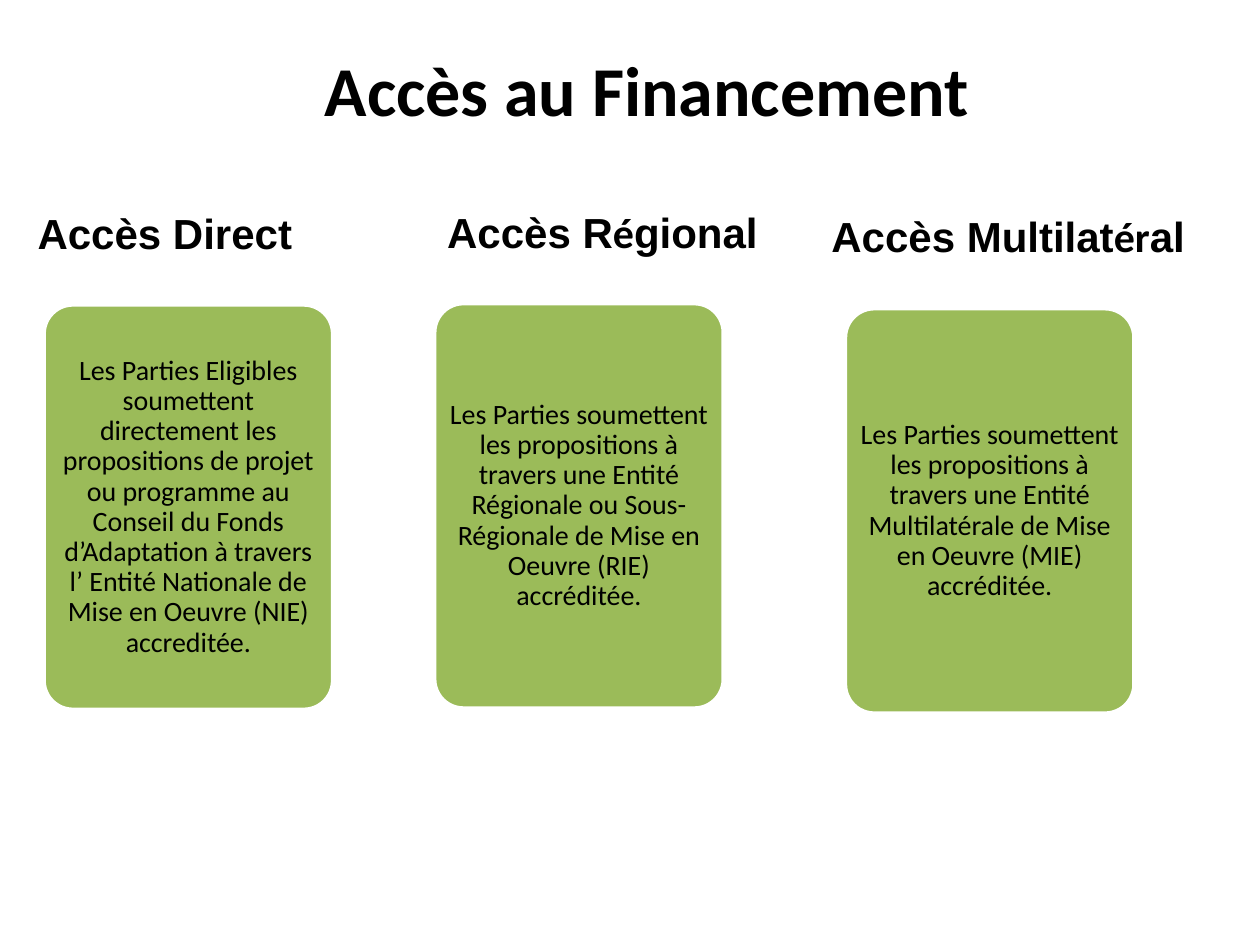
from dataclasses import dataclass

from pptx import Presentation
from pptx.dml.color import RGBColor
from pptx.enum.shapes import MSO_SHAPE
from pptx.enum.text import MSO_ANCHOR, MSO_AUTO_SIZE, PP_ALIGN
from pptx.slide import Slide
from pptx.text.text import TextFrame, _Paragraph
from pptx.util import Inches, Pt

SLIDE_WIDTH, SLIDE_HEIGHT = 10, 7.5


@dataclass(frozen=True)
class Theme:
    text: RGBColor = RGBColor(0x00, 0x00, 0x00)
    card: RGBColor = RGBColor(0x9B, 0xBB, 0x59)
    outline: RGBColor = RGBColor(0xFF, 0xFF, 0xFF)
    body_font: str = "Calibri"
    heading_font: str = "Arial"
    title_size: int = 40
    heading_size: int = 24
    body_size: int = 16


@dataclass(frozen=True)
class Box:
    """A rectangle in inches."""
    left: float
    top: float
    width: float
    height: float

    def lengths(self) -> list[Inches]:
        return [Inches(value) for value in (self.left, self.top, self.width, self.height)]


@dataclass(frozen=True)
class Run:
    text: str
    font: str
    size: int
    bold: bool = True


@dataclass(frozen=True)
class AccessRoute:
    heading: list[Run]
    heading_box: Box
    card_left: float
    card_top: float
    description: str
    wrap_heading: bool = False


THEME = Theme()
CARD_WIDTH = SLIDE_WIDTH * 0.229
CARD_HEIGHT = SLIDE_HEIGHT * 0.428
HEADING_HEIGHT = 0.5


def heading_runs(*texts: str) -> list[Run]:
    """Alternate the heading font with the body font, piece by piece."""
    fonts = (THEME.heading_font, THEME.body_font)
    return [Run(text, fonts[index % 2], THEME.heading_size) for index, text in enumerate(texts)]


ROUTES = [
    AccessRoute(
        heading_runs("Accès Direct"), Box(0.2, 1.6, 2.24, HEADING_HEIGHT), 0.35, 2.42,
        "Les Parties Eligibles soumettent directement les propositions de projet ou programme "
        "au Conseil du Fonds d’Adaptation à travers l’ Entité Nationale de Mise en Oeuvre (NIE) "
        "accreditée."),
    AccessRoute(
        heading_runs("Accès R", "é", "gional"), Box(3.45, 1.59, 2.69, HEADING_HEIGHT), 3.45, 2.41,
        "Les Parties soumettent les propositions à travers une Entité Régionale ou "
        "Sous-Régionale de Mise en Oeuvre (RIE) accréditée."),
    AccessRoute(
        heading_runs("Accès Multilat", "ér", "al"), Box(6.5, 1.62, 3.07, HEADING_HEIGHT), 6.71, 2.45,
        "Les Parties soumettent les propositions à travers une Entité Multilatérale de Mise en "
        "Oeuvre (MIE) accréditée.",
        wrap_heading=True),
]


def add_runs(paragraph: _Paragraph, runs: list[Run]) -> None:
    for item in runs:
        run = paragraph.add_run()
        run.text = item.text
        run.font.name = item.font
        run.font.size = Pt(item.size)
        run.font.bold = item.bold
        run.font.color.rgb = THEME.text


def add_label(slide: Slide, box: Box, runs: list[Run], wrap: bool = False) -> None:
    frame: TextFrame = slide.shapes.add_textbox(*box.lengths()).text_frame
    frame.word_wrap = wrap
    frame.auto_size = MSO_AUTO_SIZE.SHAPE_TO_FIT_TEXT
    add_runs(frame.paragraphs[0], runs)


def add_card(slide: Slide, box: Box, description: str) -> None:
    shape = slide.shapes.add_shape(MSO_SHAPE.ROUNDED_RECTANGLE, *box.lengths())
    shape.adjustments[0] = 0.1
    shape.shadow.inherit = False
    shape.fill.solid()
    shape.fill.fore_color.rgb = THEME.card
    shape.line.color.rgb = THEME.outline
    shape.line.width = Pt(2)

    frame = shape.text_frame
    frame.word_wrap = True
    frame.vertical_anchor = MSO_ANCHOR.MIDDLE
    frame.margin_left = frame.margin_right = Inches(0.04)
    frame.margin_top = frame.margin_bottom = Inches(0.03)
    paragraph = frame.paragraphs[0]
    paragraph.alignment = PP_ALIGN.CENTER
    paragraph.line_spacing = 0.9
    add_runs(paragraph, [Run(description, THEME.body_font, THEME.body_size, bold=False)])


def main() -> None:
    presentation = Presentation()
    presentation.slide_width = Inches(SLIDE_WIDTH)
    presentation.slide_height = Inches(SLIDE_HEIGHT)
    slide = presentation.slides.add_slide(presentation.slide_layouts[6])

    # Title
    add_label(slide, Box(2.48, 0.32, 5.37, 0.77),
              [Run("Accès au Financement", THEME.body_font, THEME.title_size)])

    # One heading and one card per access route
    for route in ROUTES:
        add_label(slide, route.heading_box, route.heading, route.wrap_heading)
        add_card(slide, Box(route.card_left, route.card_top, CARD_WIDTH, CARD_HEIGHT),
                 route.description)

    presentation.save("out.pptx")


if __name__ == "__main__":
    main()
